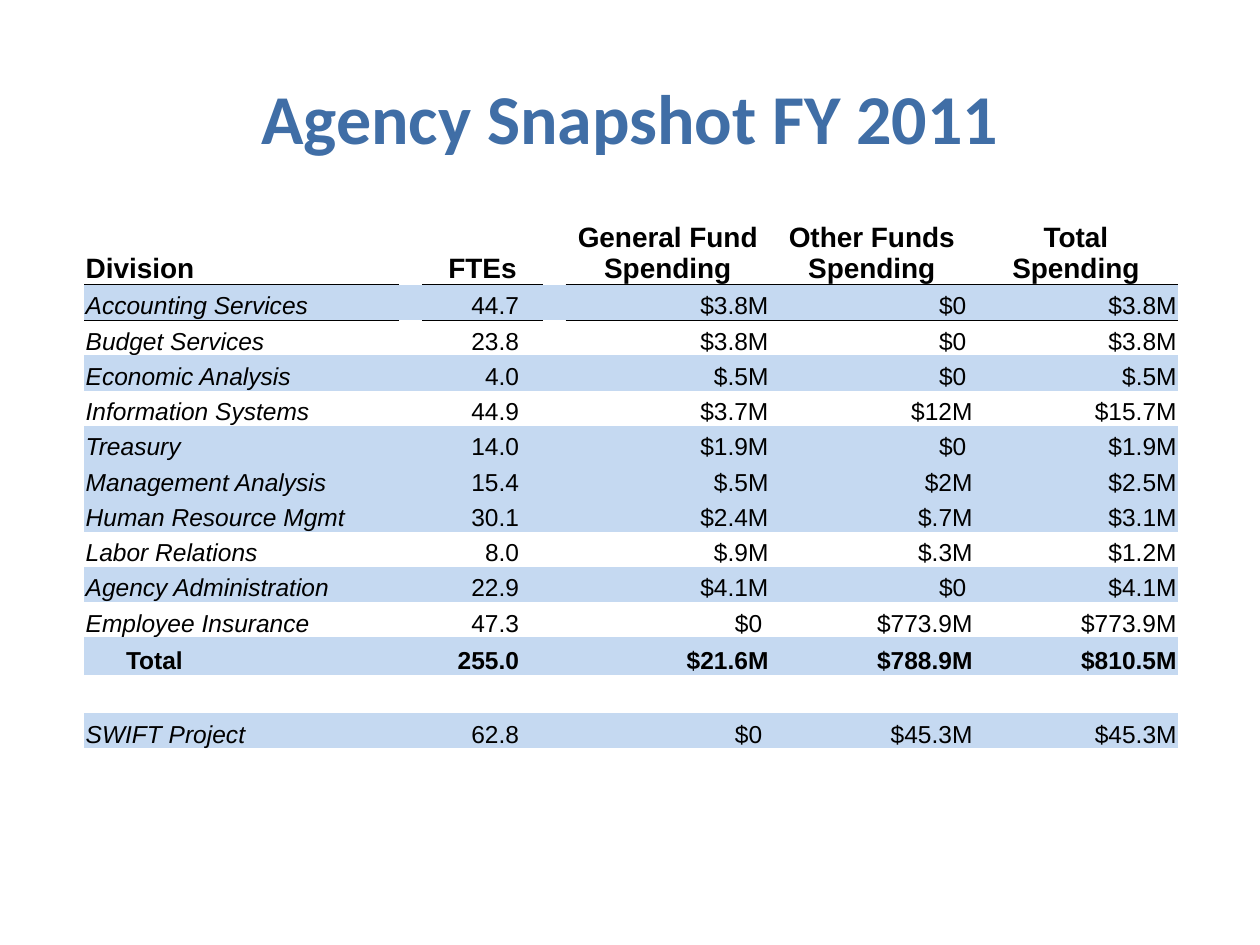
import pptx
import pptx.dml.color
import pptx.enum.text
import pptx.oxml
import pptx.oxml.ns
import pptx.util
from lxml import etree

COLORS = {"title": "406EA6", "text": "000000", "band": "C5D9F1", "rule": "000000"}
ALIGN = pptx.enum.text.PP_ALIGN
ANCHOR = pptx.enum.text.MSO_ANCHOR
inches = pptx.util.Inches
qn = pptx.oxml.ns.qn
NO_GRID_STYLE = "{2D5ABB26-0587-4C30-8999-92F81FD0307C}"


def write_text(frame, text, font="Arial", size=14, color="text", bold=False,
               italic=False, align=ALIGN.LEFT):
    paragraph = frame.paragraphs[0]
    paragraph.text = text
    paragraph.alignment = align
    for run in paragraph.runs:
        run.font.name = font
        run.font.size = pptx.util.Pt(size)
        run.font.bold = bold
        run.font.italic = italic
        run.font.color.rgb = pptx.dml.color.RGBColor.from_string(COLORS[color])
    if not text:  # an empty cell must not stretch its row
        etree.SubElement(paragraph._p, qn("a:endParaRPr"), sz=str(size * 100))


def add_border(cell, side):
    cell._tc.get_or_add_tcPr().append(pptx.oxml.parse_xml(
        f'<a:{side} xmlns:a="http://schemas.openxmlformats.org/drawingml/2006/main" w="6350">'
        f'<a:solidFill><a:srgbClr val="{COLORS["rule"]}"/></a:solidFill></a:{side}>'))


presentation = pptx.Presentation()
presentation.slide_width = inches(10)
presentation.slide_height = inches(7.5)
slide = presentation.slides.add_slide(presentation.slide_layouts[5])

# Title
title = slide.shapes.title
title.left, title.top = inches(0.5), inches(0.3)
title.width, title.height = inches(9), inches(1.25)
title.text_frame.vertical_anchor = ANCHOR.MIDDLE
write_text(title.text_frame, "Agency Snapshot FY 2011", font="Calibri", size=40,
           color="title", bold=True, align=ALIGN.CENTER)

# Table content: division, FTEs, general fund, other funds, total
headers = ["Division", "FTEs", "General Fund Spending", "Other Funds Spending",
           "Total\vSpending"]
divisions = [
    ["Accounting Services", "44.7", "$3.8M", "$0", "$3.8M"],
    ["Budget Services", "23.8", "$3.8M", "$0", "$3.8M"],
    ["Economic Analysis", "4.0", "$.5M", "$0", "$.5M"],
    ["Information Systems", "44.9", "$3.7M", "$12M", "$15.7M"],
    ["Treasury", "14.0", "$1.9M", "$0", "$1.9M"],
    ["Management Analysis", "15.4", "$.5M", "$2M", "$2.5M"],
    ["Human Resource Mgmt", "30.1", "$2.4M", "$.7M", "$3.1M"],
    ["Labor Relations", "8.0", "$.9M", "$.3M", "$1.2M"],
    ["Agency Administration", "22.9", "$4.1M", "$0", "$4.1M"],
    ["Employee Insurance", "47.3", "$0", "$773.9M", "$773.9M"],
]
total = ["Total", "255.0", "$21.6M", "$788.9M", "$810.5M"]
project = ["SWIFT Project", "62.8", "$0", "$45.3M", "$45.3M"]
blank = [""] * 5
rows = [headers, *divisions, total, blank, project, blank]
plain_rows = {"Division", "Budget Services", "Information Systems", "Labor Relations",
              "Employee Insurance", ""}

# Grid, with narrow spacer columns on both sides of the FTEs
column_widths = [2.5, 0.18, 0.96, 0.18] + [1.62] * 3
row_heights = [0.59] + [0.28] * len(divisions) + [0.3, 0.3, 0.28, 0.3]
table = slide.shapes.add_table(
    len(rows), len(column_widths), inches(0.67), inches(1.67),
    inches(sum(column_widths)), inches(sum(row_heights))).table
table.first_row = table.horz_banding = False
table._tbl.tblPr.find(qn("a:tableStyleId")).text = NO_GRID_STYLE
for column, width in zip(table.columns, column_widths):
    column.width = inches(width)
for row, height in zip(table.rows, row_heights):
    row.height = inches(height)

# Cells
for row_index, (name, staff, *spending) in enumerate(rows):
    is_header = row_index == 0
    is_total = name == "Total"
    for column_index, text in enumerate([name, "", staff, "", *spending]):
        cell = table.cell(row_index, column_index)
        is_name = column_index == 0
        cell.vertical_anchor = ANCHOR.BOTTOM
        cell.margin_left = inches(0.33 if is_name and is_total else 0.01)
        cell.margin_right = cell.margin_top = inches(0.01)
        cell.margin_bottom = 0
        if column_index == 2 and not is_header:
            cell.margin_right = inches(0.19)
        elif text == "$0":
            cell.margin_right = inches(0.06)

        if is_name:
            align = ALIGN.LEFT
        else:
            align = ALIGN.CENTER if is_header else ALIGN.RIGHT
        write_text(cell.text_frame, text, size=16 if is_header else 14,
                   bold=is_header or is_total, align=align,
                   italic=is_name and not (is_header or is_total))

        # Rule under the header, broken at the spacer columns
        if row_index < 2 and column_index not in (1, 3):
            add_border(cell, "lnB" if is_header else "lnT")
        if name in plain_rows:
            cell.fill.background()
        else:
            cell.fill.solid()
            cell.fill.fore_color.rgb = pptx.dml.color.RGBColor.from_string(COLORS["band"])

presentation.save("out.pptx")
